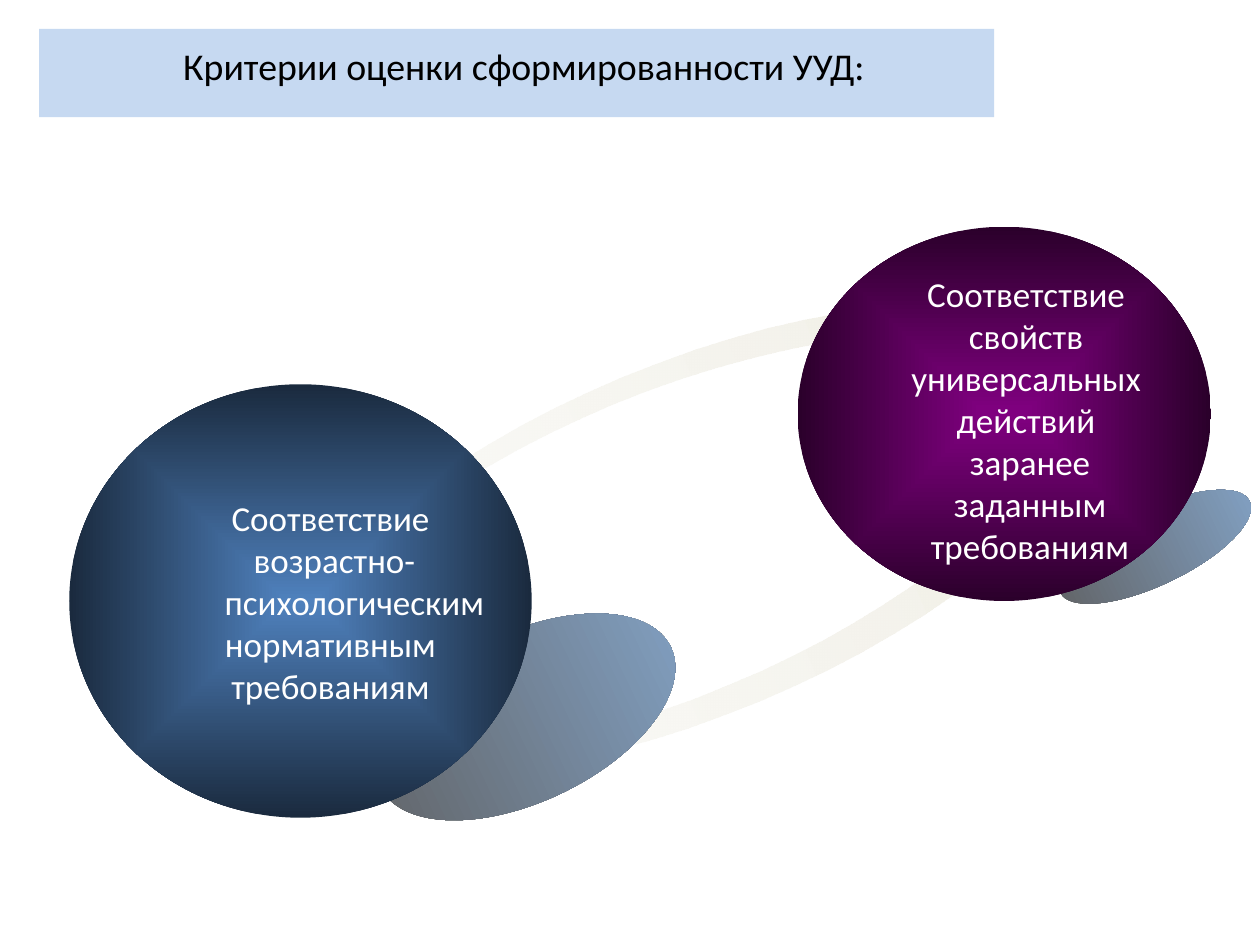
from math import cos, pi, sin

from lxml.etree import SubElement
from pptx import Presentation
from pptx.dml.color import RGBColor
from pptx.enum.shapes import MSO_SHAPE
from pptx.enum.text import MSO_ANCHOR, PP_ALIGN
from pptx.oxml.ns import qn
from pptx.util import Inches, Pt

AGE_LINES = [
    "Соответствие ",
    "возрастно-психологическим ",
    "нормативным ",
    "требованиям ",
]
PROPERTY_LINES = [
    "Соответствие ",
    "свойств ",
    "универсальных ",
    "действий ",
    "заранее",
    "заданным",
    "требованиям",
]


def rgb(value):
    return RGBColor.from_string(value)


def write(frame, lines, size=20, color="FFFFFF", hanging=0, wrap=True,
          inset_left=0.1, inset_top=0.05, inset_bottom=0.05,
          anchor=MSO_ANCHOR.TOP):
    frame.word_wrap = wrap
    frame.vertical_anchor = anchor
    frame.margin_left = Inches(inset_left)
    frame.margin_top = Inches(inset_top)
    frame.margin_bottom = Inches(inset_bottom)
    for index, line in enumerate(lines):
        paragraph = frame.add_paragraph() if index else frame.paragraphs[0]
        paragraph.alignment = PP_ALIGN.CENTER
        if hanging:
            properties = paragraph._p.get_or_add_pPr()
            properties.set("marL", str(Inches(hanging)))
            properties.set("indent", str(-Inches(hanging)))
        run = paragraph.add_run()
        run.text = line
        run.font.name = "Calibri"
        run.font.size = Pt(size)
        run.font.color.rgb = rgb(color)


def shade(shape, start, end, from_center=False, start_opacity=None):
    shape.shadow.inherit = False
    shape.line.fill.background()
    shape.fill.gradient()
    shape.fill.gradient_angle = 0
    for stop, color in zip(shape.fill.gradient_stops, (start, end)):
        stop.color.rgb = rgb(color)
    gradient = shape._element.spPr.find(qn("a:gradFill"))
    if start_opacity is not None:
        first_color = gradient.find(".//" + qn("a:srgbClr"))
        SubElement(first_color, qn("a:alpha"), val=str(start_opacity * 1000))
    if from_center:
        gradient.remove(gradient.find(qn("a:lin")))
        radial = SubElement(gradient, qn("a:path"), path="shape")
        SubElement(radial, qn("a:fillToRect"),
                   dict.fromkeys("ltrb", "50000"))


def ellipse_points(center_x, center_y, radius_x, radius_y, count=72):
    angles = [2 * pi * step / count for step in range(count)]
    return [(Inches(center_x + radius_x * cos(angle)),
             Inches(center_y + radius_y * sin(angle))) for angle in angles]


def add_ring(slide, left, top, width, height):
    center_x, center_y = left + width / 2, top + height / 2
    outer = ellipse_points(center_x, center_y, width / 2, height / 2)
    inner = ellipse_points(center_x - 0.17, center_y - 0.02,
                           width * 0.46, height * 0.43)
    builder = slide.shapes.build_freeform(*outer[0], scale=1.0)
    builder.add_line_segments(outer[1:])
    builder.move_to(*inner[0])
    builder.add_line_segments(inner[1:])
    ring = builder.convert_to_shape()
    ring.rotation = 337.4
    shade(ring, "F8F7F3", "EEECE1", start_opacity=36)


def add_ellipse(slide, left, top, width, height, start, end,
                rotation=0, from_center=False):
    ellipse = slide.shapes.add_shape(
        MSO_SHAPE.OVAL, *map(Inches, (left, top, width, height)))
    ellipse.rotation = rotation
    shade(ellipse, start, end, from_center)


def add_label(slide, left, top, width, height, lines, **text_format):
    label = slide.shapes.add_textbox(
        *map(Inches, (left, top, width, height)))
    write(label.text_frame, lines, **text_format)


def add_heading(slide, left, top, width, height):
    heading = slide.shapes.title
    heading.left, heading.top = Inches(left), Inches(top)
    heading.width, heading.height = Inches(width), Inches(height)
    heading.fill.solid()
    heading.fill.fore_color.rgb = rgb("C6D9F1")
    write(heading.text_frame, ["Критерии оценки сформированности УУД:"],
          size=21.6, color="000000", inset_left=0.22, inset_bottom=0.18,
          anchor=MSO_ANCHOR.MIDDLE)


def main():
    presentation = Presentation()
    presentation.slide_width = Inches(10)
    presentation.slide_height = Inches(7.5)
    slide = presentation.slides.add_slide(presentation.slide_layouts[5])

    add_heading(slide, 0.31, 0.23, 7.58, 0.7)
    add_ring(slide, 1.98, 2.88, 7, 2.79)
    for cast_shadow in ((8.33, 4.04, 1.67, 0.6), (2.89, 5.02, 2.56, 1.34)):
        add_ellipse(slide, *cast_shadow, "5F5F5F", "84A5CA", rotation=334.3)
    add_ellipse(slide, 0.55, 3.05, 3.67, 3.44, "4F81BD", "1A2A3E",
                from_center=True)
    add_ellipse(slide, 6.33, 1.8, 3.28, 2.97, "800080", "2B002B",
                from_center=True)
    add_label(slide, 0.94, 3.59, 3.43, 2.42, AGE_LINES,
              hanging=0.38, inset_top=0.35)
    add_label(slide, 7.03, 2.11, 2.29, 2.46, PROPERTY_LINES, wrap=False)

    presentation.save("out.pptx")


if __name__ == "__main__":
    main()
